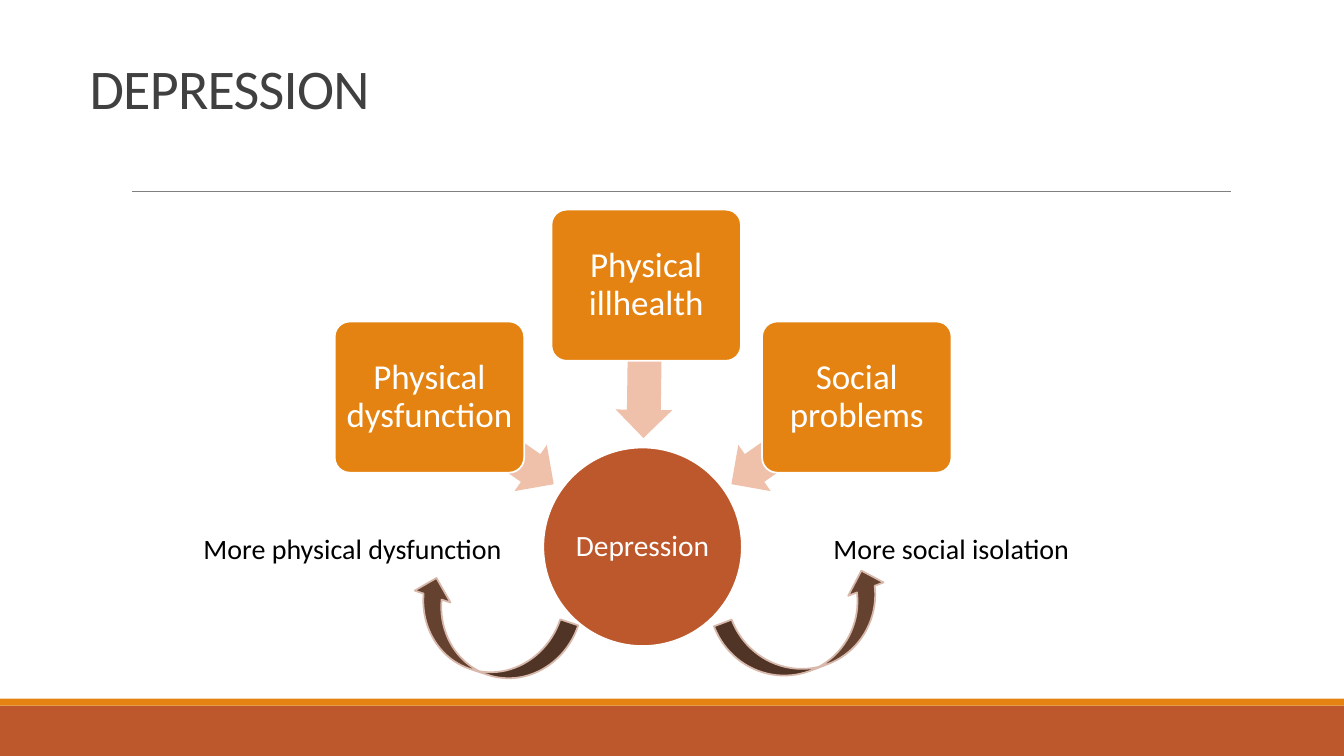
"""Build the slide on the causes and effects of depression."""
from lxml import etree
from pptx import Presentation
from pptx.dml.color import RGBColor
from pptx.enum.shapes import MSO_CONNECTOR, MSO_SHAPE
from pptx.enum.text import MSO_ANCHOR, PP_ALIGN
from pptx.oxml.ns import qn
from pptx.util import Inches, Pt

RECT, ROUND, OVAL = MSO_SHAPE.RECTANGLE, MSO_SHAPE.ROUNDED_RECTANGLE, MSO_SHAPE.OVAL
ARROW, CURVE = MSO_SHAPE.LEFT_ARROW, MSO_SHAPE.CURVED_UP_ARROW
MIDDLE, BOTTOM = MSO_ANCHOR.MIDDLE, MSO_ANCHOR.BOTTOM
LEFT, CENTER = PP_ALIGN.LEFT, PP_ALIGN.CENTER

# Content: centres and sizes are percent of slide width and height.
TITLE = ("DEPRESSION", (50.4, 10.33), (88.95, 12.67))
RULE = (9.83, 91.58, 25.33)
BARS = [("rust", (50, 96.67), (100, 6.67)), ("orange", (50, 92.87), (100, 0.93))]
HUB = ("Depression", (47.81, 72.33), (14.78, 26.27))
CAUSES = [
    ("Physical dysfunction", (31.95, 52.53), (36.56, 58.27), 215),
    ("Physical illhealth", (48.08, 37.73), (47.96, 47.87), 270.8),
    ("Social problems", (63.75, 52.53), (59.06, 58.27), 325),
]
BOX, SHAFT = (14.1, 20), (11.33, 7.47)
EFFECTS = [
    ("More social isolation", (70.91, 72.53), (19.28, 5.87),
     (60.26, 83.4), (13.13, 10), 339.3, False),
    ("More physical dysfunction", (26.36, 72.53), (23.93, 5.87),
     (36.19, 83.93), (12.53, 10), 198.5, True),
]
THEME = {
    "font": "Calibri",
    "rust": "BD582C", "orange": "E48312", "peach": "EFC1AB", "brown": "654130",
    "edge": "D7B8AB", "rule": "808080", "head": "404040",
    "white": "FFFFFF", "black": "000000",
    "title": 40, "cause": 25, "hub": 21, "effect": 20,
}

deck = Presentation()
deck.slide_width, deck.slide_height = Inches(13.333), Inches(7.5)
COL, ROW = deck.slide_width / 100, deck.slide_height / 100
slide = deck.slides.add_slide(deck.slide_layouts[6])


def tint(name):
    return RGBColor.from_string(THEME[name])


def place(mid, size):
    (x, y), (w, h) = mid, size
    return [round(v) for v in ((x - w / 2) * COL, (y - h / 2) * ROW, w * COL, h * ROW)]


def draw(kind, mid, size, fill, edge=None, turn=0):
    shape = slide.shapes.add_shape(kind, *place(mid, size))
    shape.shadow.inherit = False
    shape.fill.solid()
    shape.fill.fore_color.rgb = tint(fill)
    if edge:
        shape.line.color.rgb = tint(edge)
        shape.line.width = Pt(1.25)
    else:
        shape.line.fill.background()
    shape.rotation = turn
    return shape


def write(shape, text, size, color, align=CENTER, anchor=MIDDLE, pad=None, lead=0.9, wrap=True):
    frame = shape.text_frame
    frame.text = text
    frame.word_wrap = wrap
    frame.vertical_anchor = anchor
    if pad is not None:
        frame.margin_left = frame.margin_right = Inches(pad)
        frame.margin_top = frame.margin_bottom = Inches(pad)
    para = frame.paragraphs[0]
    para.alignment, para.line_spacing = align, lead
    font = para.runs[0].font
    font.name, font.size = THEME["font"], Pt(THEME[size])
    font.color.rgb = tint(color)
    return para.runs[0]


def main():
    for fill, mid, size in BARS:
        draw(RECT, mid, size, fill)
    start, end, level = RULE
    y = round(level * ROW)
    rule = slide.shapes.add_connector(
        MSO_CONNECTOR.STRAIGHT, round(start * COL), y, round(end * COL), y)
    rule.line.color.rgb = tint("rule")
    rule.line.width = Pt(0.5)
    etree.SubElement(rule.element.spPr, qn("a:effectLst"))

    text, mid, size = TITLE
    box = slide.shapes.add_textbox(*place(mid, size))
    run = write(box, text, "title", "head", LEFT, BOTTOM, lead=0.85)
    run.font.element.set("spc", "-50") if hasattr(run.font, "element") else \
        run.text and run._r.get_or_add_rPr().set("spc", "-50")

    text, mid, size = HUB
    write(draw(OVAL, mid, size, "rust", "white"), text, "hub", "white", pad=0.01)

    for text, mid, tip, turn in CAUSES:
        shaft = draw(ARROW, tip, SHAFT, "peach", turn=turn)
        shaft.adjustments[0], shaft.adjustments[1] = 0.6, 0.5
        card = draw(ROUND, mid, BOX, "orange", "white")
        card.adjustments[0] = 0.1
        write(card, text, "cause", "white", pad=0.05)

    for text, mid, size, bend, span, turn, flip in EFFECTS:
        curve = draw(CURVE, bend, span, "brown", "edge", turn)
        if flip:
            curve.element.spPr.find(qn("a:xfrm")).set("flipV", "1")
        label = slide.shapes.add_textbox(*place(mid, size))
        write(label, text, "effect", "black", LEFT, lead=1, wrap=False)

    deck.save("out.pptx")


if __name__ == "__main__":
    main()
